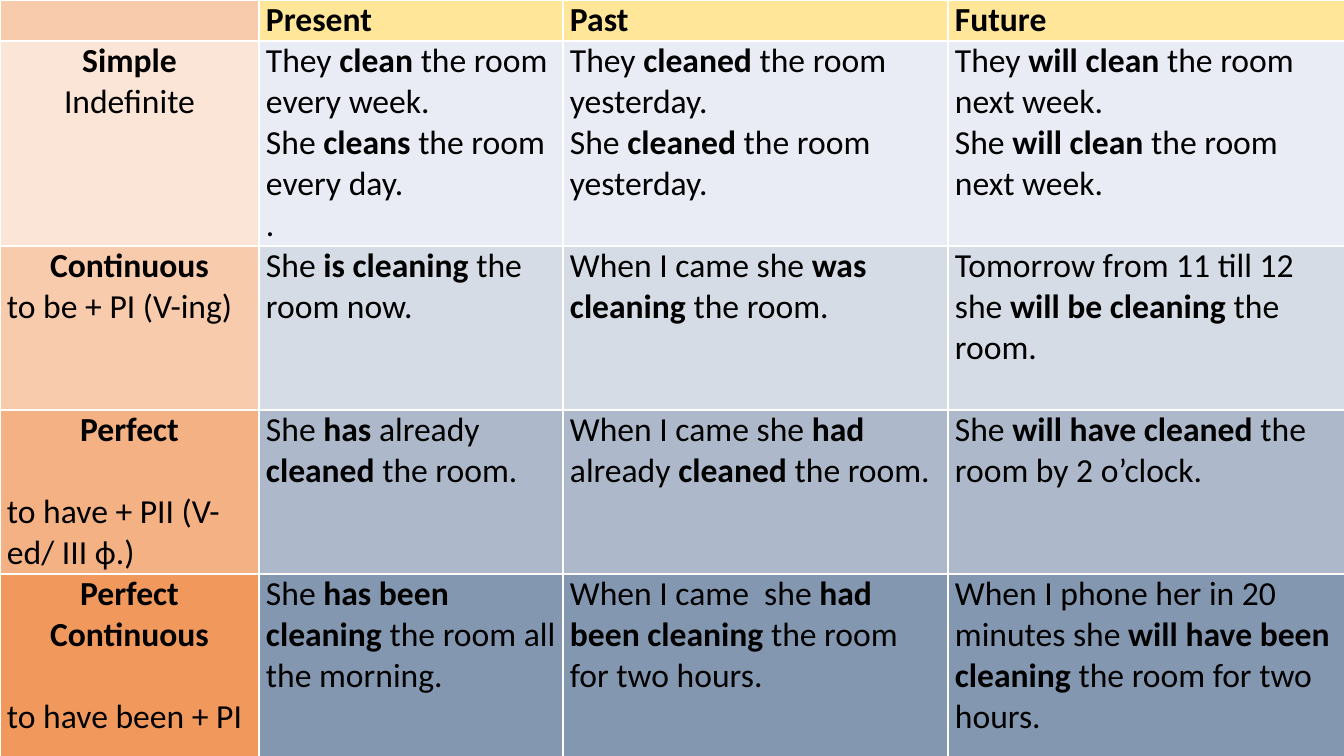
"""Build a slide with a table of English tenses."""
from dataclasses import dataclass

from lxml.etree import SubElement
from pptx import Presentation
from pptx.dml.color import RGBColor as Rgb
from pptx.enum.text import PP_ALIGN as Align
from pptx.oxml.ns import qn
from pptx.table import _Cell as Cell
from pptx.util import Emu, Pt

SCALE = 914400 / 100.8
WIDTHS = (259, 304, 385, 403)
INSET = 7
LINE = 29


@dataclass(frozen=True)
class Para:
    """Text with bold parts between asterisks."""
    text: str
    mid: bool = False
    gap: int = 0


@dataclass(frozen=True)
class Tense:
    """One row of the table."""
    high: int
    side: str
    body: str
    label: tuple[Para, ...]
    cells: tuple[tuple[Para, ...], ...]


ROWS = (
    Tense(41, "F8CBAD", "FFE699", (), (
        (Para("*Present*"),), (Para("*Past*"),), (Para("*Future*"),))),
    Tense(205, "FBE5D6", "E9EBF5",
          (Para("*Simple*", True), Para("Indefinite", True)), (
              (Para("They *clean* the room every week."),
               Para("She *cleans* the room every day."), Para(".")),
              (Para("They *cleaned* the room yesterday."),
               Para("She *cleaned* the room yesterday.")),
              (Para("They *will clean *the room next week."),
               Para("She *will clean *the room next week.")))),
    Tense(164, "F8CBAD", "D6DCE5",
          (Para("*Continuous*", True), Para("to be + PI (V-ing)")), (
              (Para("She *is cleaning *the room now."),),
              (Para("When I came she *was cleaning *the room."),),
              (Para("Tomorrow from 11 till 12 she *will be cleaning *the room."),))),
    Tense(164, "F4B183", "ADB9CA",
          (Para("*Perfect*", True), Para("to have + PII (V-ed/ III ф.)", gap=LINE)), (
              (Para("She *has* already *cleaned* the room."),),
              (Para("When I came she *had* already *cleaned* the room."),),
              (Para("She *will have cleaned *the room by 2 o’clock."),))),
    Tense(192, "F1995D", "8497B0",
          (Para("*Perfect Continuous*", True), Para("to have been + PI", gap=LINE)), (
              (Para("She *has been cleaning *the room all the morning."),),
              (Para("When I came  she *had been cleaning *the room for two hours."),),
              (Para("When I phone her in 20 minutes she "
                    "*will have been cleaning *the room for two hours."),))),
)


def px(size: int) -> Emu:
    """Turn pixels into EMU."""
    return Emu(round(size * SCALE))


def color(code: str) -> Rgb:
    """Turn a hex string into a colour."""
    return Rgb.from_string(code)


def edge(cell: Cell, code: str) -> None:
    """Draw a thin line on each side of a cell."""
    props = cell._tc.get_or_add_tcPr()
    for side in ("a:lnL", "a:lnR", "a:lnT", "a:lnB"):
        line = SubElement(props, qn(side), w=str(Pt(1)))
        fill = SubElement(line, qn("a:solidFill"))
        SubElement(fill, qn("a:srgbClr"), val=code)


def write(cell: Cell, paras: tuple[Para, ...]) -> None:
    """Put paragraphs into a cell."""
    frame = cell.text_frame
    for num, para in enumerate(paras):
        block = frame.add_paragraph() if num else frame.paragraphs[0]
        block.alignment = Align.CENTER if para.mid else Align.LEFT
        block.space_before = Pt(para.gap)
        for part, text in enumerate(para.text.split("*")):
            if text:
                run = block.add_run()
                run.text = text
                run.font.name = "Calibri"
                run.font.size = Pt(24)
                run.font.bold = part % 2 == 1
                run.font.color.rgb = color("000000")


def paint(cell: Cell, code: str, paras: tuple[Para, ...]) -> None:
    """Style and fill one cell."""
    cell.margin_left = cell.margin_right = px(INSET)
    cell.margin_top = cell.margin_bottom = px(0)
    edge(cell, "FFFFFF")
    cell.fill.solid()
    cell.fill.fore_color.rgb = color(code)
    write(cell, paras)


def main() -> None:
    """Build and save the slide."""
    deck = Presentation()
    deck.slide_width, deck.slide_height = px(1344), px(756)
    slide = deck.slides.add_slide(deck.slide_layouts[6])
    tall = sum(row.high for row in ROWS)
    table = slide.shapes.add_table(len(ROWS), len(WIDTHS), px(0), px(0),
                                   px(sum(WIDTHS)), px(tall)).table
    table.first_row = table.horz_banding = False
    for col, wide in zip(table.columns, WIDTHS):
        col.width = px(wide)
    for line, row in zip(table.rows, ROWS):
        line.height = px(row.high)
        fills = (row.side,) + (row.body,) * len(row.cells)
        for cell, fill, paras in zip(line.cells, fills, (row.label, *row.cells)):
            paint(cell, fill, paras)
    deck.save("out.pptx")


if __name__ == "__main__":
    main()
